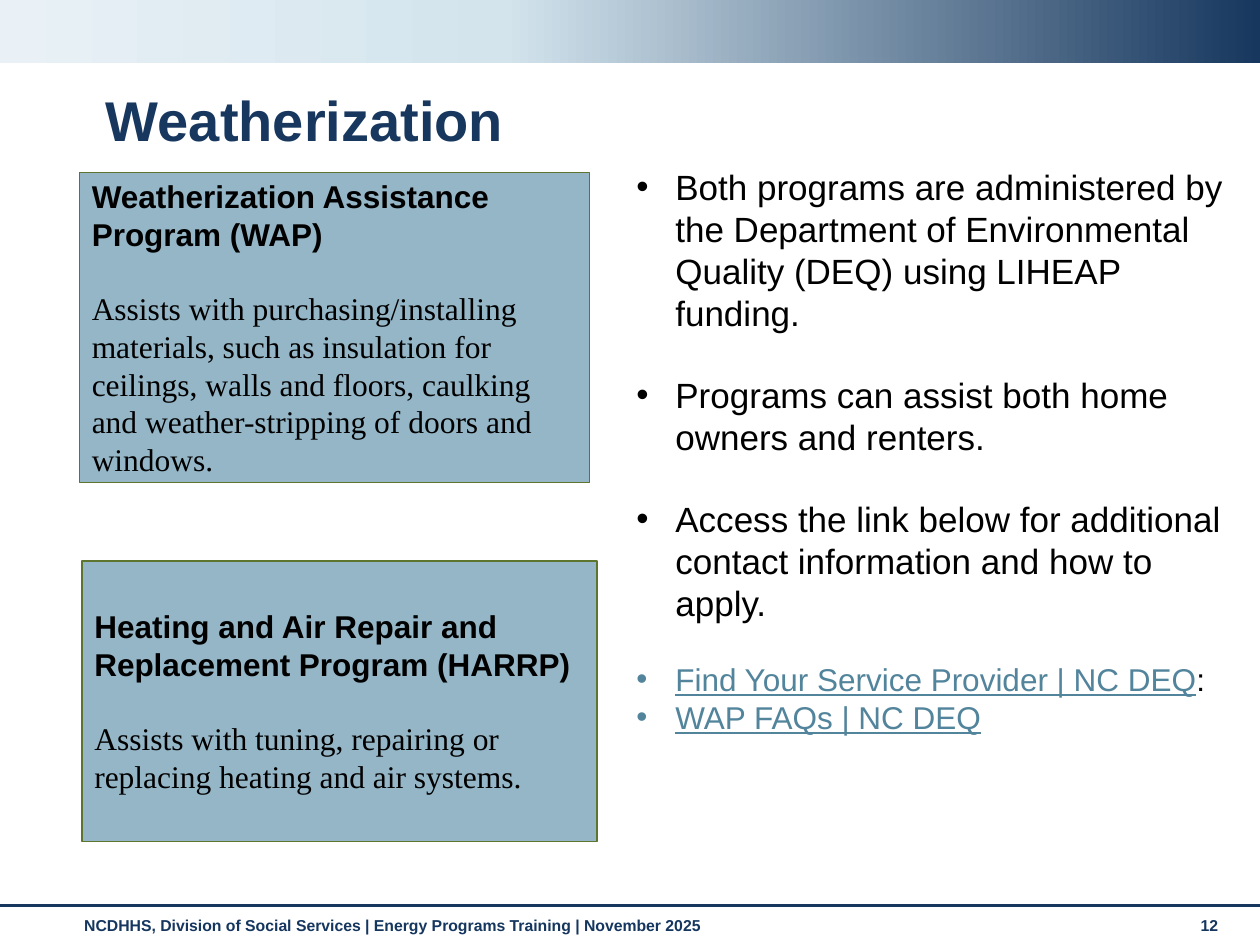
"""Build the weatherization programs slide."""
from typing import NamedTuple

from lxml.etree import SubElement
from pptx import Presentation
from pptx.dml.color import RGBColor
from pptx.enum.shapes import MSO_CONNECTOR, MSO_SHAPE
from pptx.enum.text import MSO_ANCHOR, MSO_AUTO_SIZE, PP_ALIGN
from pptx.oxml.ns import qn
from pptx.util import Inches, Pt

COLORS = {
    "navy": "17375E", "footer": "15365E", "sky": "D3E4ED", "pale": "E9F1F6",
    "panel": "94B6C7", "border": "5E752F", "link": "52849C", "text": "000000",
}


class Box(NamedTuple):
    left: float
    top: float
    width: float
    height: float


class Run(NamedTuple):
    text: str
    size: float
    color: str = "text"
    bold: bool = False
    underline: bool = False
    font: str = "Arial"


class Program(NamedTuple):
    box: Box
    name: str
    summary: str


class Bullet(NamedTuple):
    runs: list[Run]
    gap: float = 0


PROGRAMS = [
    Program(Box(0.63, 1.37, 4.05, 2.46), "Weatherization Assistance Program (WAP)",
            "Assists with purchasing/installing materials, such as insulation for ceilings, "
            "walls and floors, caulking and weather-stripping of doors and windows."),
    Program(Box(0.65, 4.45, 4.09, 2.23),
            "Heating and Air Repair and Replacement Program (HARRP)",
            "Assists with tuning, repairing or replacing heating and air systems."),
]
BULLETS = [
    Bullet([Run("Both programs are administered by the Department of Environmental "
                "Quality (DEQ) using LIHEAP funding.", 20)]),
    Bullet([Run("Programs can assist both home owners and renters.", 20)], 23),
    Bullet([Run("Access the link below for additional contact information "
                "and how to apply.", 20)], 23),
    Bullet([Run("Find Your Service Provider | NC DEQ", 18, "link", underline=True),
            Run(":", 18)], 20.7),
    Bullet([Run("WAP FAQs | NC DEQ", 18, "link", underline=True)]),
]
FOOTERS = [
    (Box(0.57, 7.22, 8.74, 0.29),
     "NCDHHS, Division of Social Services | Energy Programs Training | November 2025"),
    (Box(9.43, 7.22, 0.44, 0.3), "12"),
]


def rgb(name: str) -> RGBColor:
    """Look up a named colour."""
    return RGBColor.from_string(COLORS[name])


def place(sp, box: Box) -> None:
    """Move and size a shape."""
    sp.left, sp.top, sp.width, sp.height = map(Inches, box)


def add_run(p, run: Run) -> None:
    """Append a formatted run to a paragraph."""
    r = p.add_run()
    r.text = run.text
    r.font.name = run.font
    r.font.size = Pt(run.size)
    r.font.bold = run.bold
    r.font.underline = run.underline
    r.font.color.rgb = rgb(run.color)


def next_paragraph(tf, index: int):
    """Return the first paragraph or a new one."""
    return tf.add_paragraph() if index else tf.paragraphs[0]


def add_rect(s, box: Box):
    """Add a rectangle without a shadow."""
    sp = s.shapes.add_shape(MSO_SHAPE.RECTANGLE, *map(Inches, box))
    sp.shadow.inherit = False
    return sp


def add_banner(s) -> None:
    """Add the gradient band across the top."""
    sp = add_rect(s, Box(0, 0, 10, 0.5))
    sp.line.fill.background()
    sp.fill.gradient()
    sp.fill.gradient_angle = 180
    stops = sp.fill._fill._gradFill.find(qn("a:gsLst"))
    stops.clear()
    for pos, name in ((0, "navy"), (60, "sky"), (100, "pale")):
        gs = SubElement(stops, qn("a:gs"), pos=str(pos * 1000))
        SubElement(gs, qn("a:srgbClr"), val=COLORS[name])


def add_footer(s) -> None:
    """Add the footer rule and its texts."""
    ends = map(Inches, (0, 7.19, 10, 7.19))
    line = s.shapes.add_connector(MSO_CONNECTOR.STRAIGHT, *ends)
    line.line.color.rgb = rgb("navy")
    line.line.width = Pt(1.75)
    SubElement(line._element.spPr, qn("a:effectLst"))
    for box, text in FOOTERS:
        tf = s.shapes.add_textbox(*map(Inches, box)).text_frame
        tf.word_wrap = True
        add_run(tf.paragraphs[0], Run(text, 9, "footer", True))


def add_program(s, program: Program) -> None:
    """Add a panel describing one program."""
    sp = add_rect(s, program.box)
    sp.fill.solid()
    sp.fill.fore_color.rgb = rgb("panel")
    sp.line.color.rgb = rgb("border")
    sp.line.width = Pt(1)
    tf = sp.text_frame
    tf.word_wrap = True
    tf.vertical_anchor = MSO_ANCHOR.MIDDLE
    runs = (Run(program.name, 18, bold=True),
            Run(program.summary, 18, font="Times New Roman"))
    for i, run in enumerate(runs):
        p = next_paragraph(tf, i)
        p.alignment = PP_ALIGN.LEFT
        p.space_before = Pt(20.7 * i)
        add_run(p, run)


def fill_title(sp) -> None:
    """Place and format the title."""
    place(sp, Box(0.74, 0.68, 8.58, 0.6))
    tf = sp.text_frame
    tf.auto_size = MSO_AUTO_SIZE.NONE
    tf.vertical_anchor = MSO_ANCHOR.MIDDLE
    p = tf.paragraphs[0]
    p.alignment = PP_ALIGN.LEFT
    p.line_spacing = 0.9
    add_run(p, Run("Weatherization", 32, "navy", True))


def fill_body(sp) -> None:
    """Place the body and write its bullets."""
    place(sp, Box(4.95, 1.26, 4.86, 4.71))
    tf = sp.text_frame
    tf.auto_size = MSO_AUTO_SIZE.NONE
    for i, bullet in enumerate(BULLETS):
        p = next_paragraph(tf, i)
        p.space_before = Pt(bullet.gap)
        pPr = p._p.get_or_add_pPr()
        pPr.set("marL", str(Inches(0.31)))
        pPr.set("indent", str(-Inches(0.31)))
        SubElement(pPr, qn("a:buFont"), typeface="Arial")
        SubElement(pPr, qn("a:buChar"), char="•")
        for run in bullet.runs:
            add_run(p, run)


def main() -> None:
    """Assemble and save the slide."""
    prs = Presentation()
    prs.slide_width, prs.slide_height = Inches(10), Inches(7.5)
    s = prs.slides.add_slide(prs.slide_layouts[1])
    add_banner(s)
    add_footer(s)
    fill_title(s.shapes.title)
    fill_body(s.placeholders[1])
    for program in PROGRAMS:
        add_program(s, program)
    prs.save("out.pptx")


if __name__ == "__main__":
    main()
